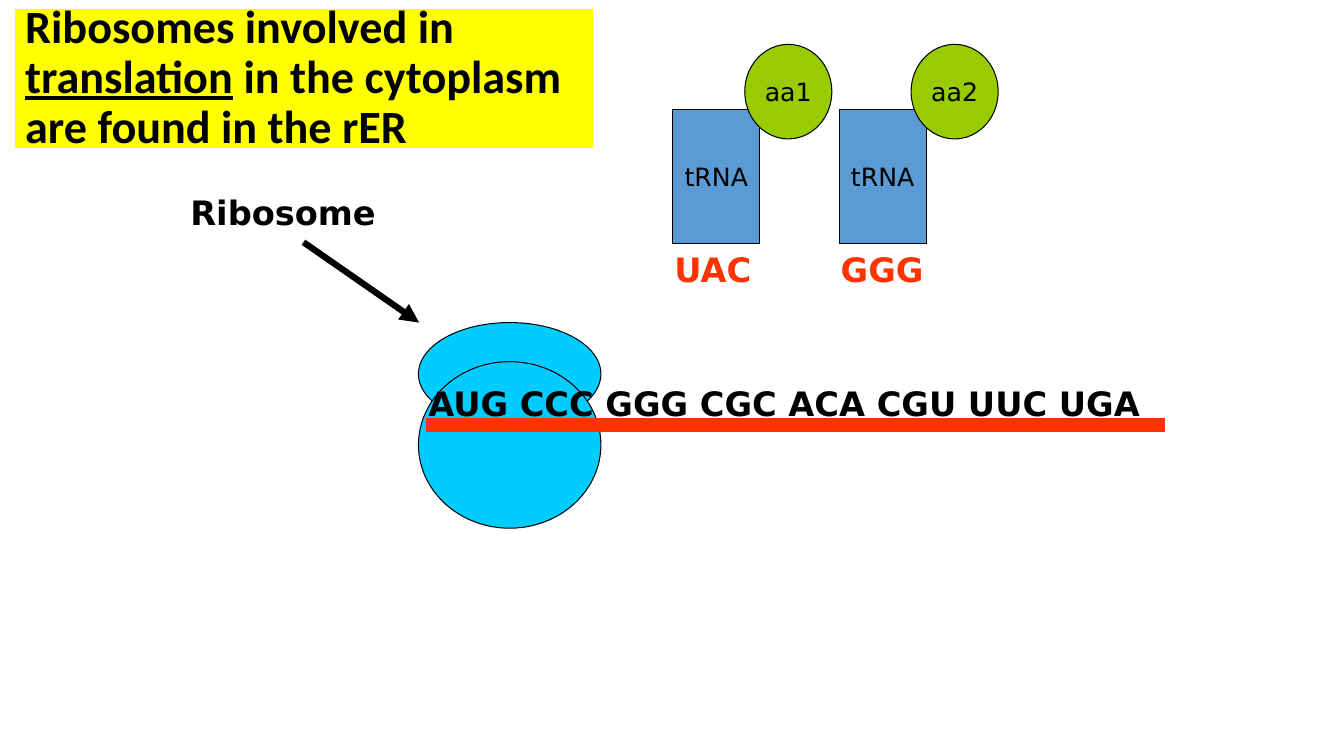
from pptx import Presentation
from pptx.dml.color import RGBColor
from pptx.enum.shapes import MSO_CONNECTOR as CONN, MSO_SHAPE as SHAPE
from pptx.enum.text import MSO_ANCHOR as ANCHOR, MSO_AUTO_SIZE as AUTO, PP_ALIGN as ALIGN
from pptx.oxml.ns import qn
from pptx.util import Inches, Pt
from lxml import etree

COLORS = {"black": "000000", "yellow": "FFFF00", "cyan": "00CCFF",
          "blue": "5B9BD5", "green": "99CC00", "red": "FF3300"}
LABEL = {"name": "DejaVu Sans", "size": Pt(18)}
STRONG = {"name": "DejaVu Sans", "size": Pt(24), "bold": True}
TITLE = {"name": "Calibri", "size": Pt(33), "bold": True}


def rgb(name):
    return RGBColor.from_string(COLORS[name])


def share(box, x, y, w, h):
    left, top, width, height = box
    return [Inches(v) for v in (left + x * width, top + y * height, w * width, h * height)]


def write(p, text, fmt, color="black", **extra):
    r = p.add_run()
    r.text = text
    for key, value in {**fmt, **extra}.items():
        setattr(r.font, key, value)
    r.font.color.rgb = rgb(color)


def add_part(shapes, kind, place, fill, text=None):
    sp = shapes.add_shape(kind, *place)
    sp.shadow.inherit = False
    sp.fill.solid()
    sp.fill.fore_color.rgb = rgb(fill)
    sp.line.color.rgb = rgb("black")
    sp.line.width = Pt(0.75)
    if text:
        tf = sp.text_frame
        tf.word_wrap = False
        tf.vertical_anchor = ANCHOR.MIDDLE
        tf.paragraphs[0].alignment = ALIGN.CENTER
        write(tf.paragraphs[0], text, LABEL)


def add_text(shapes, place, text, color="black"):
    tf = shapes.add_textbox(*place).text_frame
    tf.word_wrap = True
    tf.auto_size = AUTO.SHAPE_TO_FIT_TEXT
    write(tf.paragraphs[0], text, STRONG, color)


def add_line(shapes, box, start, end, color, width):
    x1, y1 = share(box, *start, 0, 0)[:2]
    x2, y2 = share(box, *end, 0, 0)[:2]
    line = shapes.add_connector(CONN.STRAIGHT, x1, y1, x2, y2)
    line.line.color.rgb = rgb(color)
    line.line.width = Pt(width)
    etree.SubElement(line._element.spPr, qn("a:effectLst"))
    return line


def add_title(s, box):
    sp = s.shapes.title
    sp.left, sp.top, sp.width, sp.height = share(box, 0, 0, 1, 1)
    sp.fill.solid()
    sp.fill.fore_color.rgb = rgb("yellow")
    tf = sp.text_frame
    tf.word_wrap = True
    tf.auto_size = AUTO.NONE
    tf.vertical_anchor = ANCHOR.MIDDLE
    p = tf.paragraphs[0]
    p.alignment = ALIGN.LEFT
    p.line_spacing = 0.9
    write(p, "Ribosomes involved in ", TITLE)
    write(p, "translation", TITLE, underline=True)
    write(p, " in the cytoplasm are found in the rER", TITLE)


def add_ribosome(s, box):
    shapes = s.shapes.add_group_shape().shapes
    for y, h in ((0, 0.5), (0.19, 0.81)):
        add_part(shapes, SHAPE.OVAL, share(box, 0, y, 1, h), "cyan")


def add_trna(s, box, anticodon, amino_acid):
    shapes = s.shapes.add_group_shape().shapes
    add_part(shapes, SHAPE.RECTANGLE, share(box, 0.05, 0.26, 0.52, 0.54), "blue", "tRNA")
    add_text(shapes, share(box, 0, 0.8, 0.71, 0.2), anticodon, "red")
    add_part(shapes, SHAPE.OVAL, share(box, 0.48, 0, 0.52, 0.38), "green", amino_acid)


def add_mrna(s, box, codons):
    shapes = s.shapes.add_group_shape().shapes
    add_line(shapes, box, (0.01, 0.94), (1, 0.94), "red", 10)
    add_text(shapes, share(box, 0, 0, 1, 1), codons)


def add_callout(s, box, text):
    add_text(s.shapes, share(box, 0, 0, 1, 0.37), text)
    arrow = add_line(s.shapes, box, (0.5, 0.41), (0.97, 1), "black", 4.5)
    etree.SubElement(arrow.line._get_or_add_ln(), qn("a:tailEnd"), type="triangle")


def main():
    prs = Presentation()
    prs.slide_width, prs.slide_height = Inches(13.33), Inches(7.5)
    s = prs.slides.add_slide(prs.slide_layouts[5])
    add_title(s, (0.15, 0.09, 5.73, 1.38))
    add_ribosome(s, (4.15, 3.2, 1.81, 2.04))
    for i, (anticodon, amino_acid) in enumerate((("UAC", "aa1"), ("GGG", "aa2"))):
        add_trna(s, (6.59 + 1.65 * i, 0.44, 1.66, 2.47), anticodon, amino_acid)
    add_mrna(s, (4.15, 3.75, 7.4, 0.5), "AUG CCC GGG CGC ACA CGU UUC UGA")
    add_callout(s, (1.79, 1.85, 2.44, 1.35), "Ribosome")
    prs.save("out.pptx")


if __name__ == "__main__":
    main()
